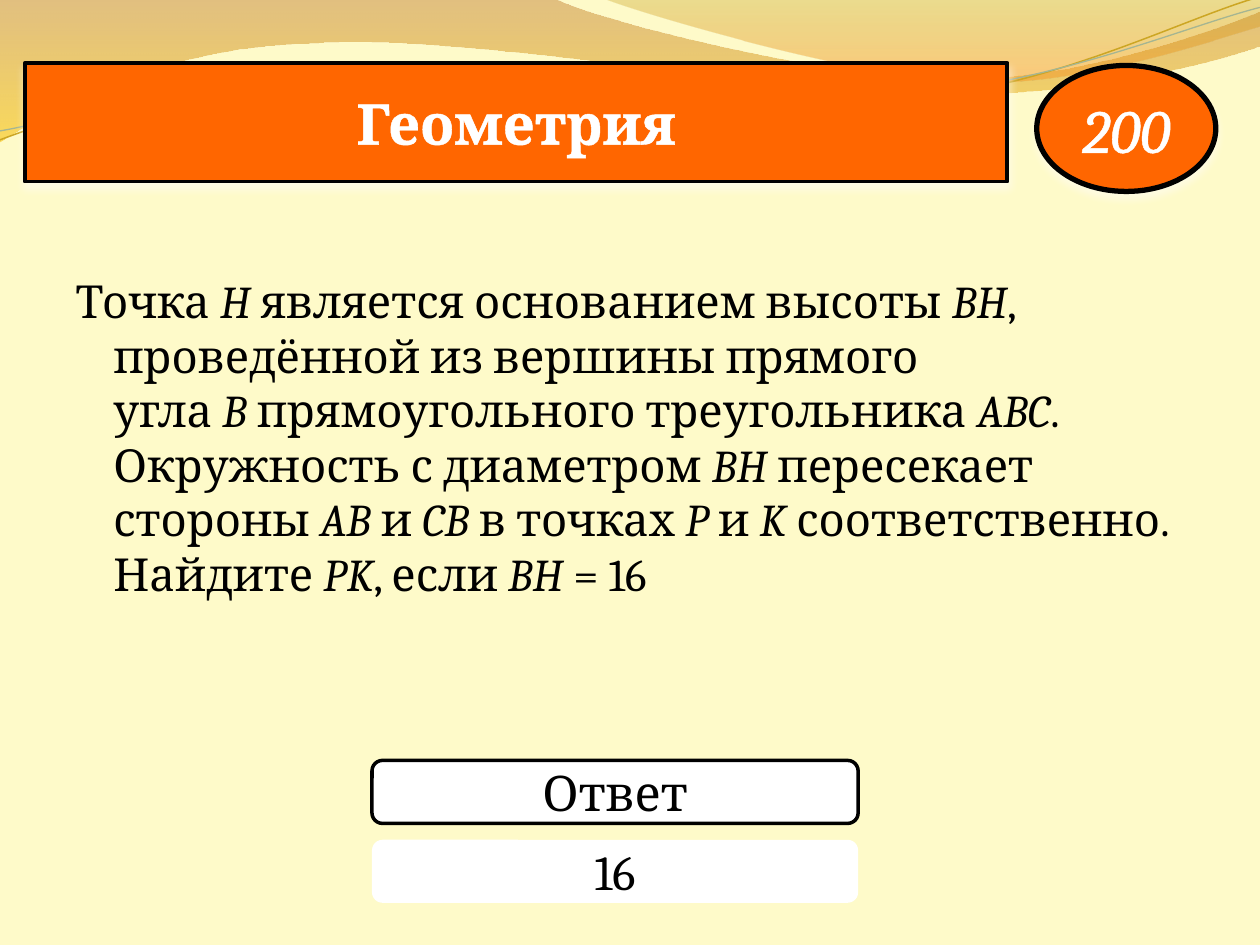
from lxml.etree import SubElement
from pptx import Presentation
from pptx.dml.color import RGBColor
from pptx.enum.shapes import MSO_SHAPE
from pptx.enum.text import MSO_ANCHOR, PP_ALIGN
from pptx.oxml import parse_xml
from pptx.oxml.ns import nsdecls, qn
from pptx.util import Cm, Pt

BLACK = RGBColor(0, 0, 0)
WHITE = RGBColor(255, 255, 255)
CREAM = RGBColor(0xFE, 0xFA, 0xC9)
ORANGE = RGBColor(0xFF, 0x66, 0x00)
BROWN = RGBColor(0xC0, 0x7A, 0x28)
YELLOW = RGBColor(0xF7, 0xBF, 0x00)
OLIVE = RGBColor(0xC0, 0x97, 0x09)
AMBER = RGBColor(0xF5, 0x93, 0x20)
GOLD = RGBColor(0xCC, 0xA6, 0x24)
SAGE = RGBColor(0xA5, 0xB5, 0x92)
HARD = chr(160)


def trace(start, parts, closed):
    points = [(Cm(x), Cm(y)) for part in parts
              for x, y in zip(part[::2], part[1::2])]
    pen = slide.shapes.build_freeform(Cm(start[0]), Cm(start[1]))
    pen.add_line_segments(points, close=closed)
    shape = pen.convert_to_shape()
    shape.shadow.inherit = False
    steps = iter(list(shape.element.spPr.iter(qn("a:lnTo"))))
    for part in parts:
        first = next(steps)
        if len(part) == 6:
            first.tag = qn("a:cubicBezTo")
            for _ in range(2):
                step = next(steps)
                first.append(step[0])
                step.getparent().remove(step)
    return shape


def write(shape, text, size, color, edge=0, bold=False, italic=False):
    frame = shape.text_frame
    frame.vertical_anchor = MSO_ANCHOR.MIDDLE
    para = frame.paragraphs[0]
    para.alignment = PP_ALIGN.CENTER
    run = para.add_run()
    run.text = text
    font = run.font
    font.name, font.size, font.bold, font.italic = "Cambria", Pt(size), bold, italic
    font.color.rgb = color
    if edge:
        run.font._element.insert(0, parse_xml(
            f'<a:ln {nsdecls("a")} w="{Pt(edge)}"><a:solidFill>'
            f'<a:srgbClr val="{color}"/></a:solidFill></a:ln>'))


prs = Presentation()
prs.slide_width, prs.slide_height = Cm(25.4), Cm(19.05)
slide = prs.slides.add_slide(prs.slide_layouts[1])
slide.background.fill.solid()
slide.background.fill.fore_color.rgb = CREAM

waves = [
    ((0, 0), [
        (11.18, -0.03),
        (12.09, 0.43, 16.87, 1.6, 19.25, 1.6),
        (21.67, 1.6, 24.33, 0.66, 25.4, 0.23),
        (25.43, 0.91),
        (24.97, 1.12, 22.1, 1.93, 18.95, 1.91),
        (15.8, 1.91, 9.7, 0.71, 6.53, 0.86),
        (3.28, 0.91, 1.17, 2.11, -0.03, 2.87),
    ], [(0, BROWN, 45), (1, YELLOW, 55)]),
    ((12.17, -0.03), [
        (12.93, 0.28, 17.32, 1.57, 19.53, 1.65),
        (21.74, 1.75, 24.41, 0.81, 25.4, 0.53),
        (25.4, 0),
    ], [(0, OLIVE, 30), (0.8, AMBER, 45)]),
]
for start, parts, stops in waves:
    wave = trace(start, parts, True)
    wave.line.fill.background()
    wave.fill.gradient()
    wave.fill.gradient_angle = 270
    for stop, (place, color, _) in zip(wave.fill.gradient_stops, stops):
        stop.position = place
        stop.color.rgb = color
    tints = wave.element.spPr.iter(qn("a:srgbClr"))
    for tint, (_, _, alpha) in zip(tints, stops):
        SubElement(tint, qn("a:alpha"), val=str(alpha * 1000))

strands = [
    ((0, 2.82), [
        (1.22, 2.36, 4.01, 1.45, 7.04, 1.32),
        (10.03, 1.19, 15.06, 2.26, 18.11, 2.03),
        (21.16, 1.8, 23.83, 0.38, 25.35, -0.05),
    ], GOLD, 0.85),
    ((0, 2.64), [
        (1.19, 2.44, 4.17, 1.55, 7.19, 1.42),
        (10.24, 1.3, 15.16, 2.13, 18.21, 1.91),
        (21.23, 1.7, 23.9, 0.53, 25.4, 0.15),
    ], SAGE, 0.75),
]
for start, parts, color, width in strands:
    strand = trace(start, parts, False)
    strand.fill.background()
    strand.line.color.rgb = color
    strand.line.width = Pt(width)

title, body = slide.shapes.title, slide.placeholders[1]
title.left, title.top, title.width, title.height = map(Cm, (0.5, 1.27, 19.81, 2.39))
title.element.spPr.append(parse_xml(
    f'<a:prstGeom {nsdecls("a")} prst="roundRect"><a:avLst/></a:prstGeom>'))
body.left, body.top, body.width, body.height = map(Cm, (1.27, 5.38, 22.86, 12.19))

ROUND, OVAL = MSO_SHAPE.ROUNDED_RECTANGLE, MSO_SHAPE.OVAL
value = slide.shapes.add_shape(ROUND, Cm(7.5), Cm(16.93), Cm(9.8), Cm(1.27))
score = slide.shapes.add_shape(OVAL, Cm(20.9), Cm(1.32), Cm(3.61), Cm(2.54))
label = slide.shapes.add_shape(ROUND, Cm(7.5), Cm(15.33), Cm(9.8), Cm(1.27))
for holder in (title, body):
    value.element.addprevious(holder.element)

plates = [(title, ORANGE, 2.25), (value, WHITE, 0), (score, ORANGE, 3), (label, WHITE, 2)]
for plate, color, width in plates:
    plate.shadow.inherit = False
    plate.fill.solid()
    plate.fill.fore_color.rgb = color
    if width:
        plate.line.color.rgb = BLACK
        plate.line.width = Pt(width)
    else:
        plate.line.fill.background()
    if color == ORANGE:
        plate.element.spPr.find(qn("a:effectLst")).append(parse_xml(
            f'<a:outerShdw {nsdecls("a")} blurRad="{Pt(4.5)}" dist="{Pt(3)}" '
            f'dir="5400000" rotWithShape="0"><a:srgbClr val="{WHITE}">'
            '<a:alpha val="48000"/></a:srgbClr></a:outerShdw>'))

write(title, "Геометрия", 32, WHITE, edge=1.45, bold=True)
write(score, "200", 35, WHITE, edge=0.75, italic=True)
write(label, "Ответ", 28, BLACK)
write(value, "16", 28, BLACK)

para = body.text_frame.paragraphs[0]
props = para._p.get_or_add_pPr()
props.set("marL", str(Cm(0.76)))
props.set("indent", str(Cm(-0.76)))
SubElement(props, qn("a:buNone"))
para.space_before = Pt(0)
words = [
    "Точка~", "H", "~является основанием высоты~", "BH",
    ", проведённой из вершины прямого угла~", "B",
    "~прямоугольного треугольника~", "ABC",
    ". Окружность с диаметром~", "BH", "~пересекает стороны~", "AB",
    "~и~", "CB", "~в точках~", "P", "~и~", "K",
    "~соответственно. Найдите~", "PK", ", если~", "BH", "~=~16",
]
for n, word in enumerate(words):
    run = para.add_run()
    run.text = word.replace("~", HARD)
    run.font.name, run.font.size = "Cambria", Pt(26)
    run.font.italic = n % 2 == 1
    run.font.color.rgb = BLACK

prs.save("out.pptx")
